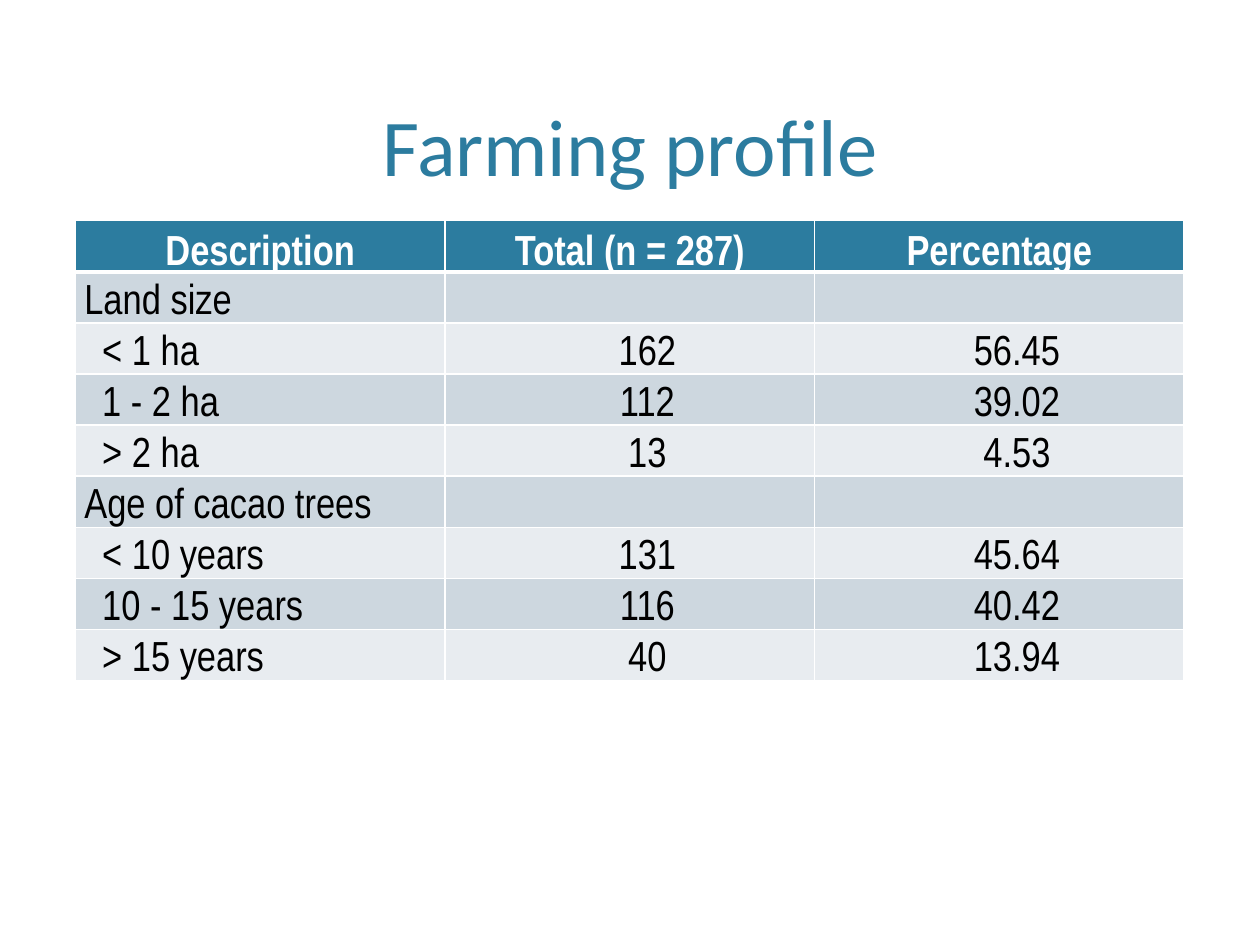
import pptx
import pptx.dml.color
import pptx.enum.text
import pptx.oxml.ns
import pptx.util
from lxml import etree

Cm = pptx.util.Cm
RGBColor = pptx.dml.color.RGBColor
Align = pptx.enum.text.PP_ALIGN
Anchor = pptx.enum.text.MSO_ANCHOR
qn = pptx.oxml.ns.qn

TEAL = RGBColor(0x2C, 0x7C, 0x9F)
WHITE = RGBColor(0xFF, 0xFF, 0xFF)
BLACK = RGBColor(0x00, 0x00, 0x00)
BAND_DARK = RGBColor(0xCD, 0xD7, 0xDF)
BAND_LIGHT = RGBColor(0xE8, 0xEC, 0xF0)

LEFT, WIDTH = Cm(1.52), Cm(22.35)
ROW_HEIGHT = Cm(1.03)
LABEL_INDENT, VALUE_INDENT = Cm(0.36), Cm(0.71)

HEADINGS = ("Description", "Total (n = 287)", "Percentage")
GROUPS = {
    "Land size": [
        ("< 1 ha", "162", "56.45"),
        ("1 - 2 ha", "112", "39.02"),
        ("> 2 ha", "13", "4.53"),
    ],
    "Age of cacao trees": [
        ("< 10 years", "131", "45.64"),
        ("10 - 15 years", "116", "40.42"),
        ("> 15 years", "40", "13.94"),
    ],
}


def write(frame, text, font="Arial Narrow", size=24, color=BLACK, bold=False,
          align=Align.LEFT, indent=0, spacing=None):
    """Fill the first paragraph of a text frame with formatted text."""
    para = frame.paragraphs[0]
    para.alignment = align
    para.line_spacing = spacing
    if indent:
        para._p.get_or_add_pPr().set("indent", str(indent))
    span = para.add_run()
    span.text = text
    span.font.name = font
    span.font.size = pptx.util.Pt(size)
    span.font.bold = bold
    span.font.color.rgb = color


class SlideBuilder:
    """Hold the slide and the style of its elements."""

    def __init__(self, page):
        """Keep the slide that receives the elements."""
        self.page = page

    def title(self, text):
        """Place and fill the title placeholder."""
        box = self.page.shapes.title
        box.left, box.top, box.width, box.height = LEFT, Cm(0.3), WIDTH, Cm(3.71)
        box.text_frame.vertical_anchor = Anchor.BOTTOM
        write(box.text_frame, text, font="Calibri", size=46, color=TEAL, align=Align.CENTER)

    def borders(self, cell, **widths):
        """Draw white borders of the given point widths around a cell."""
        properties = cell._tc.get_or_add_tcPr()
        for side in ("L", "R", "T", "B"):
            width = pptx.util.Pt(widths.get(side, 1))
            line = etree.SubElement(properties, qn(f"a:ln{side}"), w=str(width))
            fill = etree.SubElement(line, qn("a:solidFill"))
            etree.SubElement(fill, qn("a:srgbClr"), val=str(WHITE))

    def cell(self, cell, text, fill, borders, **style):
        """Format one table cell and write its text."""
        cell.margin_left = cell.margin_right = Cm(0.18)
        cell.margin_top = cell.margin_bottom = 0
        cell.vertical_anchor = Anchor.BOTTOM
        self.borders(cell, **borders)
        cell.fill.solid()
        cell.fill.fore_color.rgb = fill
        if text:
            write(cell.text_frame, text, **style)

    def table(self, headings, groups):
        """Build the banded table of grouped rows."""
        rows = []
        for name, members in groups.items():
            rows.append((name, "", ""))
            rows.extend(members)
        count = len(rows) + 1
        table = self.page.shapes.add_table(
            count, len(headings), LEFT, Cm(4.45), WIDTH, ROW_HEIGHT * count).table
        for row in table.rows:
            row.height = ROW_HEIGHT
        for column, heading in enumerate(headings):
            self.cell(table.cell(0, column), heading, TEAL, {"B": 3},
                      color=WHITE, bold=True, align=Align.CENTER, spacing=0.8)
        for number, values in enumerate(rows, start=1):
            fill = BAND_DARK if number % 2 else BAND_LIGHT
            borders = {"T": 3} if number == 1 else {}
            for column, text in enumerate(values):
                if column:
                    style = {"align": Align.CENTER, "indent": VALUE_INDENT}
                else:
                    style = {"indent": 0 if text in groups else LABEL_INDENT}
                self.cell(table.cell(number, column), text, fill, borders, **style)


def main():
    """Build and save the deck."""
    deck = pptx.Presentation()
    deck.slide_width, deck.slide_height = Cm(25.4), Cm(19.05)
    builder = SlideBuilder(deck.slides.add_slide(deck.slide_layouts[5]))
    builder.title("Farming profile")
    builder.table(HEADINGS, GROUPS)
    deck.save("out.pptx")


if __name__ == "__main__":
    main()
